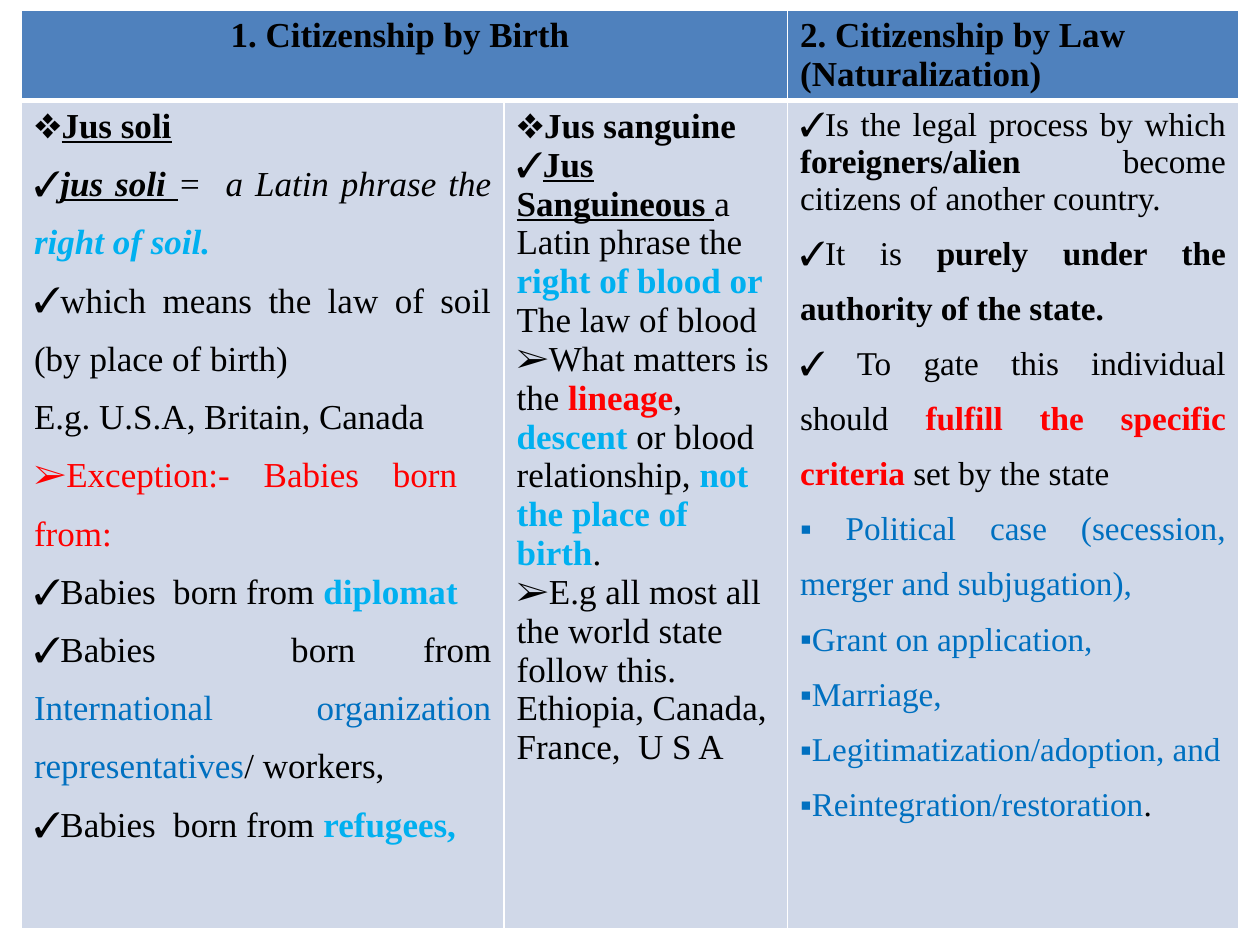
from lxml import etree
from pptx import Presentation
from pptx.dml.color import RGBColor
from pptx.enum.text import PP_ALIGN
from pptx.oxml.ns import qn
from pptx.util import Inches, Pt

LEFT, CENTER, JUSTIFY = PP_ALIGN.LEFT, PP_ALIGN.CENTER, PP_ALIGN.JUSTIFY

THEME = {
    "font": "Times New Roman", "size": 20, "law_size": 19,
    "black": "000000", "red": "FF0000", "cyan": "00B0F0", "blue": "0070C0",
    "header": "4F81BD", "body": "D0D8E8", "border": "FFFFFF",
}

# Cell text: (bullet, alignment, line spacing, level, runs)
# Each run: (text, flags b/i/u, colour)
BIRTH = [(None, CENTER, None, 0, [("1. Citizenship by Birth ", "b", "black")])]
LAW = [(None, LEFT, None, 0, [("2. Citizenship by Law (Naturalization)", "b", "black")])]

SOLI = [
    ("❖", LEFT, None, 6, [("Jus soli", "bu", "black")]),
    ("✓", JUSTIFY, 1.5, 0, [("jus soli ", "biu", "black"),
                            ("=  a Latin phrase the ", "i", "black"),
                            ("right of soil.", "bi", "cyan")]),
    ("✓", JUSTIFY, 1.5, 0, [("which means the law of soil (by place of birth) ", "", "black")]),
    (None, JUSTIFY, 1.5, 0, [("E.g. U.S.A, Britain, Canada", "", "black")]),
    ("➢", JUSTIFY, 1.5, 0, [("Exception:- Babies born  from: ", "", "red")]),
    ("✓", JUSTIFY, 1.5, 0, [("Babies  born from ", "", "black"), ("diplomat ", "b", "cyan")]),
    ("✓", JUSTIFY, 1.5, 0, [("Babies  born from ", "", "black"),
                            ("International organization representatives", "", "blue"),
                            ("/ workers,  ", "", "black")]),
    ("✓", JUSTIFY, 1.5, 0, [("Babies  born from ", "", "black"), ("refugees, ", "b", "cyan")]),
]

SANGUINE = [
    ("❖", LEFT, None, 6, [("Jus sanguine", "b", "black")]),
    ("✓", LEFT, None, 6, [("Jus Sanguineous ", "bu", "black"),
                          ("a Latin phrase the ", "", "black"),
                          ("right of blood or ", "b", "cyan"),
                          ("The law of blood", "", "black")]),
    ("➢", LEFT, None, 6, [("What matters is the ", "", "black"),
                          ("lineage", "b", "red"),
                          (", ", "", "black"),
                          ("descent", "b", "cyan"),
                          (" or blood relationship, ", "", "black"),
                          ("not the place of birth", "b", "cyan"),
                          (".", "", "black")]),
    ("➢", LEFT, None, 6, [("E.g all most all the world state  follow this. "
                           "Ethiopia, Canada, France,  U S A", "", "black")]),
]

NATURALIZATION = [
    ("✓", JUSTIFY, None, 0, [("Is the legal process by which ", "", "black"),
                             ("foreigners/alien", "b", "black"),
                             (" become citizens of another country. ", "", "black")]),
    ("✓", JUSTIFY, 1.5, 0, [("It is ", "", "black"),
                            ("purely under the authority of the state.", "b", "black")]),
    ("✓", JUSTIFY, 1.5, 0, [(" To gate this individual should ", "", "black"),
                            ("fulfill the specific criteria", "b", "red"),
                            (" set by the state", "", "black")]),
    ("▪", JUSTIFY, 1.5, 0, [(" Political case (secession, merger and subjugation),", "", "blue")]),
    ("▪", JUSTIFY, 1.5, 0, [("Grant on application, ", "", "blue")]),
    ("▪", JUSTIFY, 1.5, 0, [("Marriage,", "", "blue")]),
    ("▪", JUSTIFY, 1.5, 0, [("Legitimatization/adoption, and", "", "blue")]),
    ("▪", JUSTIFY, 1.5, 0, [("Reintegration/restoration", "", "blue"), (". ", "", "black")]),
]


def write_text(tf, paragraphs, size):
    for i, (bullet, align, spacing, level, runs) in enumerate(paragraphs):
        p = tf.paragraphs[0] if i == 0 else tf.add_paragraph()
        p.alignment, p.level = align, level
        if spacing:
            p.line_spacing = spacing
        pPr = p._p.get_or_add_pPr()
        pPr.set("marL", "0")
        pPr.set("indent", "0")
        if bullet:
            etree.SubElement(pPr, qn("a:buFont"), typeface=THEME["font"])
            etree.SubElement(pPr, qn("a:buChar"), char=bullet)
        else:
            etree.SubElement(pPr, qn("a:buNone"))
        for text, flags, colour in runs:
            r = p.add_run()
            r.text = text
            r.font.name, r.font.size = THEME["font"], Pt(size)
            r.font.bold, r.font.italic = "b" in flags, "i" in flags
            r.font.underline = "u" in flags
            r.font.color.rgb = RGBColor.from_string(THEME[colour])


def style_cell(cell, fill, widths):
    tcPr = cell._tc.get_or_add_tcPr()
    for side, width in zip("LRTB", widths):
        ln = etree.SubElement(tcPr, qn(f"a:ln{side}"), w=str(Pt(width)))
        solid = etree.SubElement(ln, qn("a:solidFill"))
        etree.SubElement(solid, qn("a:srgbClr"), val=THEME["border"])
    cell.fill.solid()
    cell.fill.fore_color.rgb = RGBColor.from_string(THEME[fill])


prs = Presentation()
prs.slide_width, prs.slide_height = Inches(10), Inches(7.5)
s = prs.slides.add_slide(prs.slide_layouts[6])

# Table grid
COLS, ROWS = [3.83, 2.25, 3.58], [0.72, 6.57]
table = s.shapes.add_table(len(ROWS), len(COLS), Inches(0.17), Inches(0.08),
                           Inches(sum(COLS)), Inches(sum(ROWS))).table
table.first_row = table.horz_banding = False
for column, width in zip(table.columns, COLS):
    column.width = Inches(width)
for row, height in zip(table.rows, ROWS):
    row.height = Inches(height)

# Fills and borders, with a thick rule under the header
for c in range(len(COLS)):
    style_cell(table.cell(0, c), "header", (1, 1, 1, 3))
    style_cell(table.cell(1, c), "body", (1, 1, 3, 1))
table.cell(0, 0).merge(table.cell(0, 1))

# Text
for r, c, paragraphs, size in [
    (0, 0, BIRTH, THEME["size"]),
    (0, 2, LAW, THEME["size"]),
    (1, 0, SOLI, THEME["size"]),
    (1, 1, SANGUINE, THEME["size"]),
    (1, 2, NATURALIZATION, THEME["law_size"]),
]:
    write_text(table.cell(r, c).text_frame, paragraphs, size)

prs.save("out.pptx")
